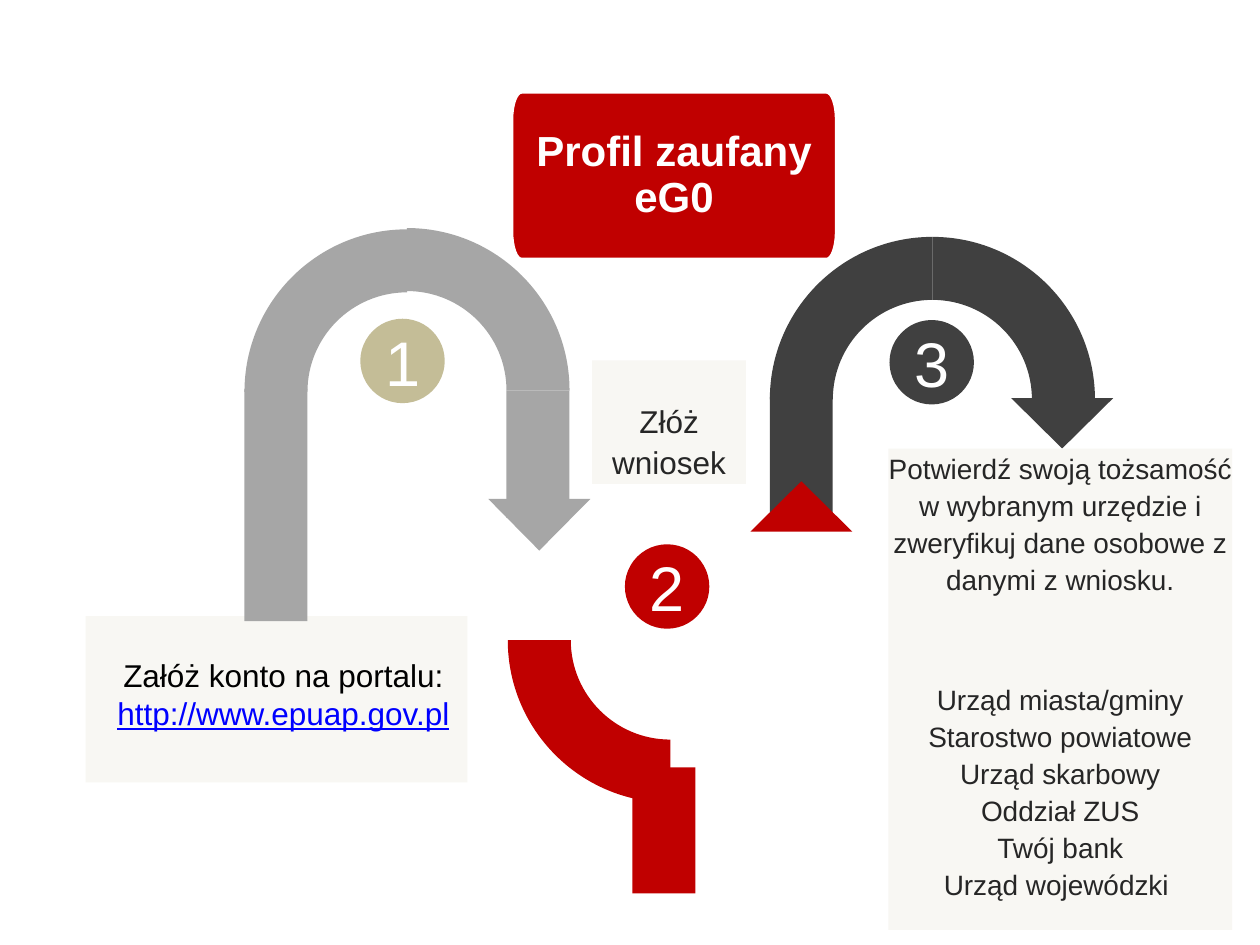
"""Build the slide on the three steps to a trusted profile."""
import math

import lxml.etree
import pptx
import pptx.dml.color
import pptx.enum.shapes
import pptx.enum.text
import pptx.oxml.ns
import pptx.util

Inches = pptx.util.Inches
Pt = pptx.util.Pt
Preset = pptx.enum.shapes.MSO_SHAPE
Anchor = pptx.enum.text.MSO_ANCHOR
qn = pptx.oxml.ns.qn

DARK, RED, GREY, SAND = "404040", "C00000", "A6A6A6", "C4BD97"
PANEL, INK, WHITE, BLACK, LINK = "F8F7F3", "262626", "FFFFFF", "000000", "0000FF"
KAPPA = 0.5523


def color(value):
    return pptx.dml.color.RGBColor.from_string(value)


def quarter(cx, cy, rx, ry, start, turn=1):
    """Return the four Bezier points of a quarter ellipse."""
    a = math.radians(start)
    b = a + turn * math.pi / 2
    ca, sa, cb, sb = math.cos(a), math.sin(a), math.cos(b), math.sin(b)
    units = [(ca, sa), (ca + KAPPA * cb, sa + KAPPA * sb),
             (cb + KAPPA * ca, sb + KAPPA * sa), (cb, sb)]
    return [(cx + rx * x, cy + ry * y) for x, y in units]


class SlideWriter:
    """Hold the style and the slide being drawn."""
    font = "Arial"
    outer, inner = 1.29, 0.79
    band = 0.5
    badge_size = 0.67

    def __init__(self, slide):
        self.slide = slide

    def paint(self, shape, fill):
        shape.shadow.inherit = False
        shape.fill.solid()
        shape.fill.fore_color.rgb = color(fill)
        shape.line.fill.background()
        return shape

    def preset(self, kind, left, top, width, height, fill):
        shape = self.slide.shapes.add_shape(
            kind, Inches(left), Inches(top), Inches(width), Inches(height))
        return self.paint(shape, fill)

    def bar(self, left, top, height, fill):
        self.preset(Preset.RECTANGLE, left, top, self.band, height, fill)

    def outline(self, points, fill):
        points = [(Inches(x), Inches(y)) for x, y in points]
        builder = self.slide.shapes.build_freeform(*points[0])
        builder.add_line_segments(points[1:], close=True)
        return self.paint(builder.convert_to_shape(), fill)

    def curved_outline(self, curves, fill):
        shape = self.outline([point for curve in curves for point in curve], fill)
        lines = list(shape.element.iter(qn("a:lnTo")))
        for first in range(0, len(lines), 4):
            bend = lxml.etree.Element(qn("a:cubicBezTo"))
            lines[first].addprevious(bend)
            for line in lines[first:first + 3]:
                bend.append(line[0])
                line.getparent().remove(line)
        return shape

    def quarter_bend(self, cx, cy, start, fill):
        rim = quarter(cx, cy, self.outer, self.outer, start)
        core = quarter(cx, cy, self.inner, self.inner, start + 90, -1)
        self.curved_outline([rim, core], fill)

    def arrowhead(self, center, base, tip, fill):
        half = 0.405
        self.outline([(center - half, base), (center + half, base), (center, tip)], fill)

    def frame(self, shape, insets=(0.1, 0.05, 0.1, 0.05), anchor=Anchor.TOP):
        frame = shape.text_frame
        frame.word_wrap = True
        frame.vertical_anchor = anchor
        (frame.margin_left, frame.margin_top,
         frame.margin_right, frame.margin_bottom) = map(Inches, insets)
        return frame

    def style(self, paragraph, size, ink, spacing=1.0, bold=False):
        paragraph.alignment = pptx.enum.text.PP_ALIGN.CENTER
        paragraph.line_spacing = spacing
        for run in paragraph.runs:
            run.font.name = self.font
            run.font.size = Pt(size)
            run.font.bold = bold
            run.font.color.rgb = color(ink)

    def badge(self, left, top, number, fill):
        circle = self.preset(Preset.OVAL, left, top, self.badge_size, self.badge_size, fill)
        frame = self.frame(circle, anchor=Anchor.MIDDLE)
        frame.text = number
        self.style(frame.paragraphs[0], 36, WHITE)

    def panel(self, left, top, width, height, lines, size=18, inset_top=0):
        box = self.preset(Preset.RECTANGLE, left, top, width, height, PANEL)
        frame = self.frame(box, (0, inset_top, 0, 0))
        frame.text = "\n".join(lines)
        for paragraph in frame.paragraphs:
            self.style(paragraph, size, INK, 1.1)
        return frame

    def title(self, left, top, width, height, text):
        rx, ry = 0.08, 0.22
        right, bottom = left + width - rx, top + height - ry
        corners = [(left + rx, top + ry), (right, top + ry), (right, bottom), (left + rx, bottom)]
        plate = self.curved_outline(
            [quarter(cx, cy, rx, ry, 180 + 90 * i) for i, (cx, cy) in enumerate(corners)], RED)
        plate.line.color.rgb = color(WHITE)
        plate.line.width = Pt(2)
        frame = self.frame(plate, (0.17,) * 4, Anchor.MIDDLE)
        frame.text = text
        self.style(frame.paragraphs[0], 24, WHITE, 0.9, True)
        frame.paragraphs[0].space_after = Pt(8.4)

    def portal_note(self, left, top, width, height, text, address):
        box = self.slide.shapes.add_textbox(
            Inches(left), Inches(top), Inches(width), Inches(height))
        note = self.frame(box).paragraphs[0]
        note.text = text
        url = note.add_run()
        url.text = address
        self.style(note, 18, BLACK)
        url.font.color.rgb = color(LINK)
        url.font.underline = True


def main():
    deck = pptx.Presentation()
    deck.slide_width, deck.slide_height = Inches(10), Inches(7.5)
    page = SlideWriter(deck.slides.add_slide(deck.slide_layouts[6]))

    page.preset(Preset.RECTANGLE, 0.68, 4.89, 3.03, 1.32, PANEL)

    page.quarter_bend(7.4, 3.17, 180, DARK)
    page.quarter_bend(7.4, 3.17, 270, DARK)
    page.bar(6.11, 3.15, 1, DARK)
    page.arrowhead(8.43, 3.16, 3.56, DARK)

    page.quarter_bend(5.32, 5.08, 90, RED)
    page.bar(5.02, 6.09, 1, RED)
    page.arrowhead(6.36, 4.22, 3.82, RED)

    page.quarter_bend(3.23, 3.11, 180, GREY)
    page.quarter_bend(3.23, 3.1, 270, GREY)
    page.bar(1.94, 3.09, 1.84, GREY)
    page.bar(4.02, 3.1, 1.01, GREY)
    page.arrowhead(4.28, 3.96, 4.37, GREY)

    page.badge(2.86, 2.53, "1", SAND)
    offices = page.panel(7.05, 3.56, 2.73, 3.82, [
        "Potwierdź swoją tożsamość w wybranym urzędzie i "
        "zweryfikuj dane osobowe z danymi z wniosku.",
        "Urząd miasta/gminy",
        "Starostwo powiatowe",
        "Urząd skarbowy",
        "Oddział ZUS",
        "Twój bank",
        "Urząd wojewódzki ",
    ], size=16)
    offices.paragraphs[1].space_before = Pt(47.5)
    page.badge(7.06, 2.54, "3", DARK)
    page.panel(4.7, 2.86, 1.22, 0.98, ["Złóż wniosek"], inset_top=0.3)
    page.badge(4.96, 4.32, "2", RED)

    page.title(4.06, 0.73, 2.58, 1.33, "Profil zaufany eG0")
    page.portal_note(-0.25, 5.16, 5, 0.7,
                     "Załóż konto na portalu: ", "http://www.epuap.gov.pl")
    deck.save("out.pptx")


if __name__ == "__main__":
    main()
